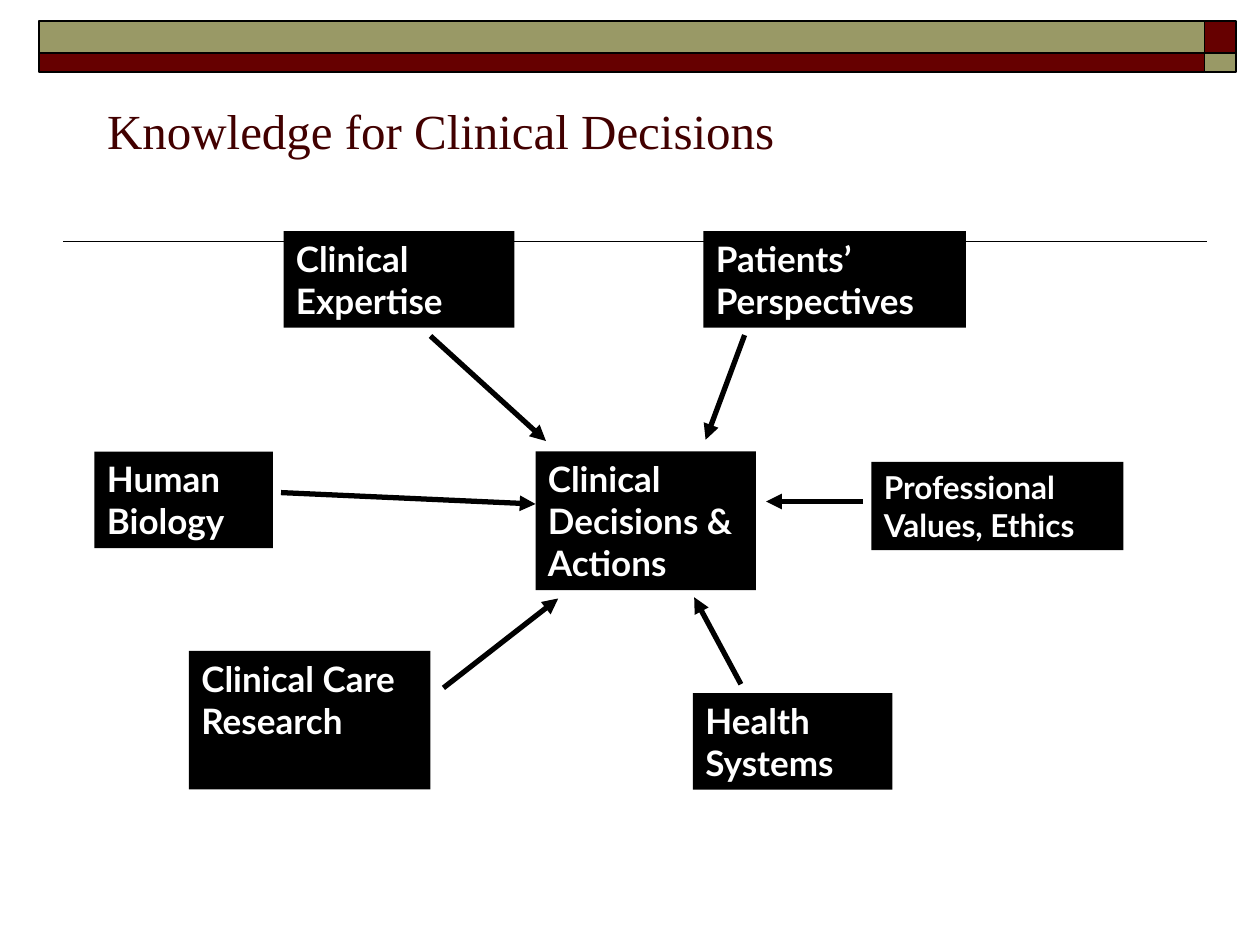
"""Builds the slide on the kinds of knowledge that feed clinical decisions."""
from dataclasses import dataclass

from lxml.etree import SubElement
from pptx import Presentation
from pptx.dml.color import RGBColor
from pptx.enum.shapes import MSO_CONNECTOR, MSO_SHAPE
from pptx.enum.text import MSO_ANCHOR, MSO_AUTO_SIZE, PP_ALIGN
from pptx.oxml.ns import qn
from pptx.util import Pt


@dataclass(frozen=True)
class Theme:
    """Colours, fonts, type sizes and line widths."""
    ink: str = "000000"
    paper: str = "FFFFFF"
    maroon: str = "660000"
    olive: str = "999966"
    heading: str = "420000"
    heading_font: str = "Times New Roman"
    body_font: str = "Lato"
    heading_size: float = 28
    body_size: float = 20
    small_size: float = 18
    hairline: float = 1
    arrow_width: float = 3


THEME = Theme()


@dataclass(frozen=True)
class Topic:
    """A labelled box."""
    label: str
    left: float
    top: float
    width: float
    height: float
    size: float = THEME.body_size


@dataclass(frozen=True)
class Link:
    """A straight line between two points."""
    x1: float
    y1: float
    x2: float
    y2: float


TOPICS = [
    Topic("Clinical Decisions & Actions", 306, 258, 126, 79.2),
    Topic("Clinical Expertise", 162, 132, 132, 55.2),
    Topic("Patients’ Perspectives", 402, 132, 150, 55.2),
    Topic("Human Biology", 54, 258, 102, 55.2),
    Topic("Clinical Care Research", 108, 372, 138, 79.2),
    Topic("Professional Values, Ethics", 498, 264, 144, 50.4, THEME.small_size),
    Topic("Health Systems", 396, 396, 114, 55.2),
]

INFLUENCES = [
    Link(160.6, 281.5, 306, 288),
    Link(425.5, 191.5, 403.2, 251.3),
    Link(253.4, 393.1, 319, 342),
    Link(423.4, 391, 396.7, 341.3),
    Link(493.2, 286.6, 437.8, 286.6),
    Link(246, 192, 312, 252),
]

HEADER_COLUMNS = [(22.3, 666), (688.3, 18)]
HEADER_ROWS = [(12.2, 18), (30.2, 10.8)]


def write_text(frame, text: str, *, font: str, size: float, color: str, bold: bool = False) -> None:
    """Fill a text frame with one formatted, left-aligned paragraph."""
    frame.word_wrap = True
    frame.auto_size = MSO_AUTO_SIZE.NONE
    frame.vertical_anchor = MSO_ANCHOR.TOP
    paragraph = frame.paragraphs[0]
    paragraph.alignment = PP_ALIGN.LEFT
    run = paragraph.add_run()
    run.text = text
    run.font.name = font
    run.font.size = Pt(size)
    run.font.bold = bold
    run.font.color.rgb = RGBColor.from_string(color)


def draw_rectangle(slide, left: float, top: float, width: float, height: float,
                   fill: str, outline: str | None = None):
    """Draw a flat rectangle and return it."""
    rectangle = slide.shapes.add_shape(
        MSO_SHAPE.RECTANGLE, Pt(left), Pt(top), Pt(width), Pt(height))
    rectangle.shadow.inherit = False
    rectangle.fill.solid()
    rectangle.fill.fore_color.rgb = RGBColor.from_string(fill)
    if outline:
        rectangle.line.color.rgb = RGBColor.from_string(outline)
        rectangle.line.width = Pt(THEME.hairline)
    else:
        rectangle.line.fill.background()
    return rectangle


def draw_link(slide, link: Link, width: float, arrow: bool = False) -> None:
    """Draw a straight line, with an arrowhead at its end if asked."""
    connector = slide.shapes.add_connector(
        MSO_CONNECTOR.STRAIGHT, Pt(link.x1), Pt(link.y1), Pt(link.x2), Pt(link.y2))
    connector.line.color.rgb = RGBColor.from_string(THEME.ink)
    connector.line.width = Pt(width)
    if arrow:
        SubElement(connector.line._get_or_add_ln(), qn("a:tailEnd"), type="triangle")
    SubElement(connector._element.spPr, qn("a:effectLst"))


def draw_header(slide) -> None:
    """Draw the checkered band and the rule below the title."""
    for row, (top, height) in enumerate(HEADER_ROWS):
        for column, (left, width) in enumerate(HEADER_COLUMNS):
            fill = THEME.maroon if (row + column) % 2 else THEME.olive
            draw_rectangle(slide, left, top, width, height, fill, THEME.ink)
    draw_link(slide, Link(36, 138, 690, 138), THEME.hairline)


def draw_title(slide, text: str) -> None:
    """Place and format the title."""
    title = slide.shapes.title
    title.left, title.top, title.width, title.height = Pt(54), Pt(54), Pt(630), Pt(72)
    write_text(title.text_frame, text, font=THEME.heading_font,
               size=THEME.heading_size, color=THEME.heading)


def draw_topic(slide, topic: Topic) -> None:
    """Draw one labelled box."""
    box = draw_rectangle(slide, topic.left, topic.top, topic.width, topic.height, THEME.ink)
    write_text(box.text_frame, topic.label, font=THEME.body_font,
               size=topic.size, color=THEME.paper, bold=True)


def main() -> None:
    """Build and save the slide."""
    presentation = Presentation()
    presentation.slide_width, presentation.slide_height = Pt(720), Pt(540)
    slide = presentation.slides.add_slide(presentation.slide_layouts[5])
    draw_header(slide)
    draw_title(slide, "Knowledge for Clinical Decisions")
    for topic in TOPICS:
        draw_topic(slide, topic)
    for influence in INFLUENCES:
        draw_link(slide, influence, THEME.arrow_width, arrow=True)
    presentation.save("out.pptx")


if __name__ == "__main__":
    main()
